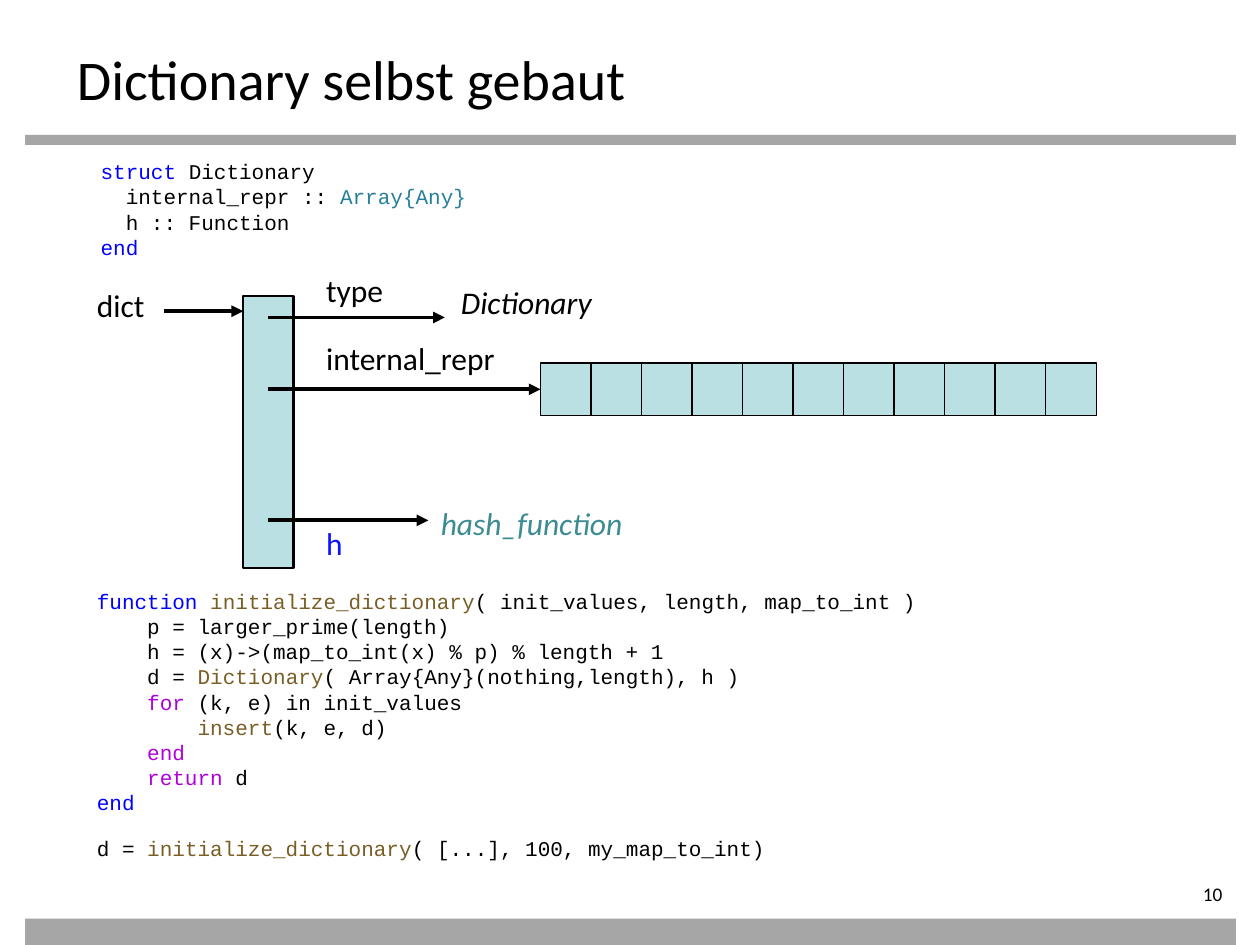
"""Build the slide about a self-made dictionary and its memory layout."""
from lxml.etree import SubElement
from pptx import Presentation
from pptx.dml.color import RGBColor
from pptx.enum.shapes import MSO_CONNECTOR, MSO_SHAPE
from pptx.enum.text import MSO_ANCHOR, MSO_AUTO_SIZE, PP_ALIGN
from pptx.oxml.ns import qn
from pptx.util import Inches, Pt

BLACK = RGBColor(0x00, 0x00, 0x00)
GRAY = RGBColor(0xA6, 0xA6, 0xA6)
CELL = RGBColor(0xBB, 0xE0, 0xE3)
FIELD = RGBColor(0x0D, 0x15, 0xFF)
HASH = RGBColor(0x3C, 0x8C, 0x93)
KEYWORD = RGBColor(0x00, 0x00, 0xFF)
CALL = RGBColor(0x79, 0x5E, 0x26)
FLOW = RGBColor(0xAF, 0x00, 0xDB)
TYPE = RGBColor(0x26, 0x7F, 0x99)

TITLE = "Dictionary selbst gebaut"
PAGE_NUMBER = "10"
BARS = [(1.07, 0.08), (7.29, 0.21)]

STRUCT_CODE = [
    [("struct", KEYWORD), (" Dictionary", BLACK)],
    [("  internal_repr :: ", BLACK), ("Array{Any}", TYPE)],
    [("  h :: Function", BLACK)],
    [("end", KEYWORD)],
]
FUNCTION_CODE = [
    [("function ", KEYWORD), ("initialize_dictionary", CALL),
     ("( init_values, length, map_to_int )", BLACK)],
    [("    p = larger_prime(length)", BLACK)],
    [("    h = (x)->(map_to_int(x) % p) % length + 1", BLACK)],
    [("    d = ", BLACK), ("Dictionary", CALL),
     ("( Array{Any}(nothing,length), h )", BLACK)],
    [("    for", FLOW), (" (k, e) in init_values", BLACK)],
    [("        insert", CALL), ("(k, e, d)", BLACK)],
    [("    end", FLOW)],
    [("    return", FLOW), (" d", BLACK)],
    [("end", KEYWORD)],
]
USAGE_CODE = [
    [("d = ", BLACK), ("initialize_dictionary", CALL),
     ("( [...], 100, my_map_to_int)", BLACK)],
]
CODE_BLOCKS = [
    (STRUCT_CODE, (0.7, 1.21, 4.58, 0.91)),
    (FUNCTION_CODE, (0.67, 4.62, 9.22, 1.92)),
    (USAGE_CODE, (0.67, 6.58, 8.41, 0.3)),
]

LABELS = [
    ("dict", 0.67, 2.22, 0.6, BLACK, False),
    ("type", 2.49, 2.1, 0.68, BLACK, False),
    ("internal_repr", 2.49, 2.64, 1.57, BLACK, False),
    ("h", 2.49, 4.11, 0.34, FIELD, False),
    ("Dictionary", 3.56, 2.2, 1.29, BLACK, True),
    ("hash_function", 3.4, 3.95, 1.68, HASH, True),
]

RECORD = (1.93, 2.35, 0.4, 2.16)
RECORD_CENTER = RECORD[0] + RECORD[2] / 2
ARRAY = (4.29, 2.88, 4.41, 0.42)
ARRAY_MIDDLE = ARRAY[1] + ARRAY[3] / 2
CELL_COUNT = 11
INNER_CELLS = (1, 3, 5, 6, 7, 9)
ARROWS = [
    (1.3, RECORD[0], 2.47),
    (RECORD_CENTER, 3.53, 2.52),
    (RECORD_CENTER, 3.4, 4.13),
]


def add_rectangle(shapes, place, fill, line_width=None):
    box = shapes.add_shape(MSO_SHAPE.RECTANGLE, *map(Inches, place))
    box.shadow.inherit = False
    box.fill.solid()
    box.fill.fore_color.rgb = fill
    if line_width is None:
        box.line.fill.background()
    else:
        box.line.color.rgb = BLACK
        box.line.width = Pt(line_width)
    return box


def add_arrow(shapes, start, end, height):
    arrow = shapes.add_connector(MSO_CONNECTOR.STRAIGHT, Inches(start), Inches(height),
                                 Inches(end), Inches(height))
    arrow.line.color.rgb = BLACK
    arrow.line.width = Pt(2.25)
    SubElement(arrow.line._get_or_add_ln(), qn("a:tailEnd"), type="triangle")
    SubElement(arrow._element.spPr, qn("a:effectLst"))
    return arrow


def style(span, size, color, name="Calibri", italic=False):
    span.font.name = name
    span.font.size = Pt(size)
    span.font.color.rgb = color
    span.font.italic = italic


def add_label(shapes, text, place, size, color, italic=False):
    box = shapes.add_textbox(*map(Inches, place))
    box.text_frame.text = text
    style(box.text_frame.paragraphs[0].runs[0], size, color, italic=italic)
    return box.text_frame


def add_code(shapes, lines, place):
    frame = shapes.add_textbox(*map(Inches, place)).text_frame
    frame.word_wrap = True
    for index, line in enumerate(lines):
        para = frame.add_paragraph() if index else frame.paragraphs[0]
        para.line_spacing = Pt(14.4)
        for text, color in line:
            span = para.add_run()
            span.text = text
            style(span, 12, color, "Courier New")


def add_title(title):
    title.left, title.top, title.width, title.height = map(Inches, (0.51, 0.28, 9, 0.55))
    frame = title.text_frame
    frame.text = TITLE
    frame.auto_size = MSO_AUTO_SIZE.NONE
    frame.vertical_anchor = MSO_ANCHOR.TOP
    frame.margin_top = Inches(0.07)
    frame.paragraphs[0].alignment = PP_ALIGN.LEFT
    style(frame.paragraphs[0].runs[0], 32, BLACK)


def add_array(shapes):
    left, top, width, height = ARRAY
    cell_width = width / CELL_COUNT
    group = shapes.add_group_shape()
    frame = add_rectangle(group.shapes, ARRAY, CELL, 0.75)
    for index in INNER_CELLS:
        place = (left + index * cell_width, top, cell_width, height)
        add_rectangle(group.shapes, place, CELL, 0.75)
    return frame


def main():
    deck = Presentation()
    deck.slide_width, deck.slide_height = Inches(10), Inches(7.5)
    page = deck.slides.add_slide(deck.slide_layouts[5])
    shapes = page.shapes

    for top, height in BARS:
        add_rectangle(shapes, (0.2, top, 9.61, height), GRAY)
    add_title(shapes.title)
    number = add_label(shapes, PAGE_NUMBER, (8.7, 7, 1.1, 0.22), 11, BLACK)
    number.margin_left = number.margin_top = number.margin_bottom = 0
    number.paragraphs[0].alignment = PP_ALIGN.RIGHT

    add_rectangle(shapes, RECORD, CELL, 1.5)
    array = add_array(shapes)
    for arrow in ARROWS:
        add_arrow(shapes, *arrow)
    array_arrow = add_arrow(shapes, RECORD_CENTER, ARRAY[0], ARRAY_MIDDLE)
    array_arrow.end_connect(array, 1)

    for text, left, top, width, color, italic in LABELS:
        frame = add_label(shapes, text, (left, top, width, 0.4), 18, color, italic)
        frame.word_wrap = False
    for lines, place in CODE_BLOCKS:
        add_code(shapes, lines, place)

    deck.save("out.pptx")


if __name__ == "__main__":
    main()
